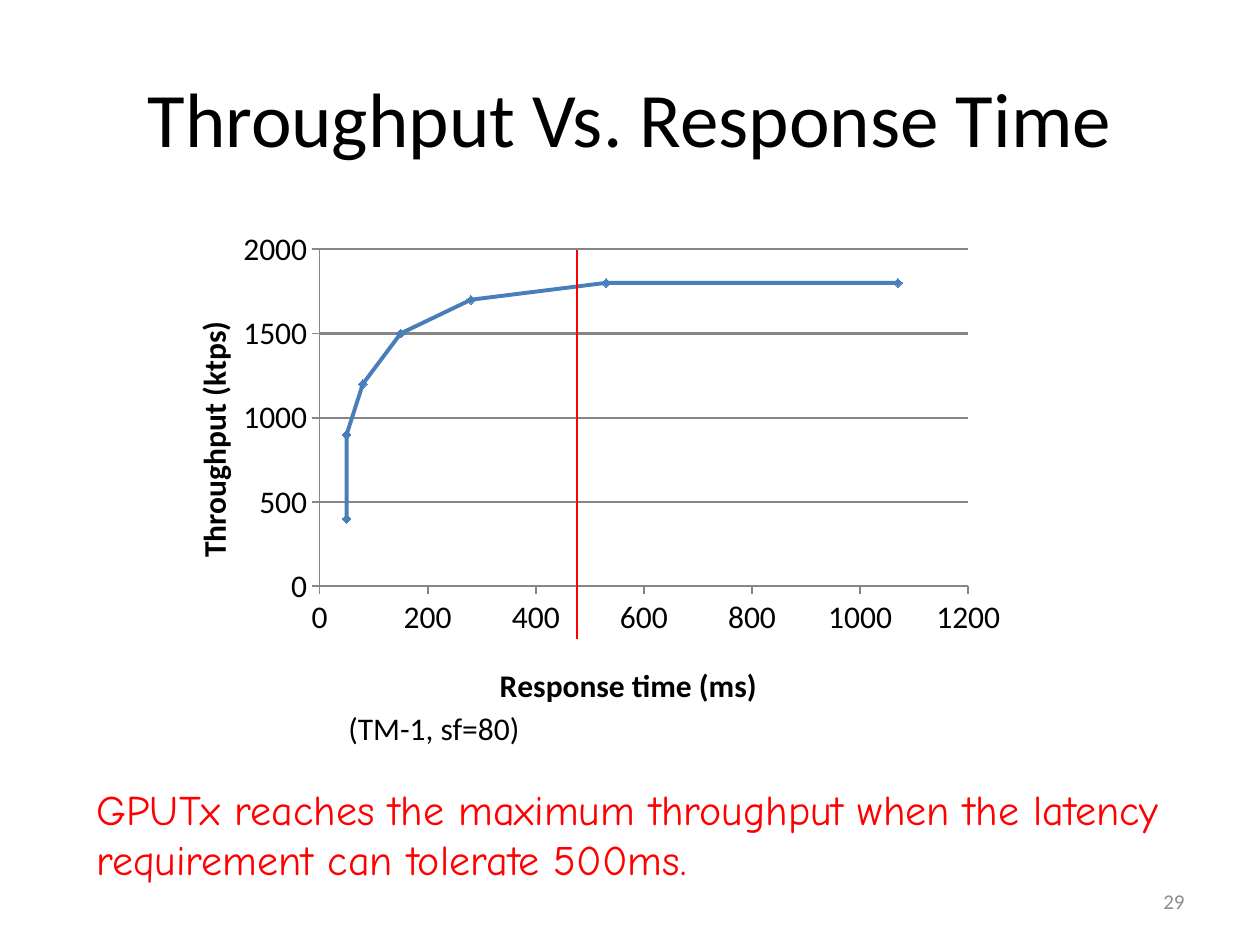
from lxml import etree
from pptx import Presentation
from pptx.chart.data import XyChartData
from pptx.dml.color import RGBColor
from pptx.enum.chart import XL_CHART_TYPE, XL_MARKER_STYLE, XL_TICK_MARK
from pptx.enum.shapes import MSO_CONNECTOR
from pptx.enum.text import MSO_ANCHOR, PP_ALIGN
from pptx.oxml.ns import qn
from pptx.util import Pt

SMOOTH_SCATTER = XL_CHART_TYPE.XY_SCATTER_SMOOTH
DIAMOND = XL_MARKER_STYLE.DIAMOND
TICK_OUTSIDE, TICK_NONE = XL_TICK_MARK.OUTSIDE, XL_TICK_MARK.NONE
STRAIGHT = MSO_CONNECTOR.STRAIGHT
TOP, MIDDLE = MSO_ANCHOR.TOP, MSO_ANCHOR.MIDDLE
LEFT, CENTER, RIGHT = PP_ALIGN.LEFT, PP_ALIGN.CENTER, PP_ALIGN.RIGHT

BLACK = RGBColor(0x00, 0x00, 0x00)
GRAY = RGBColor(0x8C, 0x8C, 0x8C)
AXIS_GRAY = RGBColor(0x86, 0x86, 0x86)
RED = RGBColor(0xFF, 0x00, 0x00)
BLUE = RGBColor(0x4F, 0x81, 0xBD)
CURVE_BLUE = RGBColor(0x4A, 0x7E, 0xBB)

EMU_PER_PX = 914400 // 126
SLIDE_SIZE = (1260, 945)
CHART_BOX = (147, 220, 872, 504)
PLOT_BOX = (320, 249, 649, 337)
LATENCY_LINE = (577, 250, 577, 639)

TEXTS = [
    {"text": "Throughput Vs. Response Time", "box": (63, 38, 1134, 157),
     "anchor": MIDDLE, "align": CENTER, "wrap": True,
     "font": {"size": Pt(44), "name": "Calibri"}, "color": BLACK},
    {"text": "29", "box": (903, 876, 294, 50),
     "anchor": MIDDLE, "align": RIGHT, "wrap": True,
     "font": {"size": Pt(12), "name": "Calibri"}, "color": GRAY},
    {"text": "(TM-1, sf=80)", "box": (336, 703, 199, 50),
     "anchor": TOP, "align": LEFT, "wrap": False,
     "font": {"size": Pt(18), "name": "Calibri"}, "color": BLACK},
    {"text": "GPUTx reaches the maximum throughput when the latency "
             "requirement can tolerate 500ms.", "box": (84, 777, 1103, 115),
     "anchor": TOP, "align": LEFT, "wrap": True,
     "font": {"size": Pt(24), "name": "Comic Neue"}, "color": RED},
]

POINTS = [(50, 400), (50, 900), (80, 1200), (150, 1500),
          (280, 1700), (530, 1800), (1070, 1800)]
AXES = {
    "category_axis": {"title": "Response time (ms)", "corner": (494, 658),
                      "maximum": 1200, "step": 200, "grid": False},
    "value_axis": {"title": "Throughput (ktps)", "corner": (186, 316),
                   "maximum": 2000, "step": 500, "grid": True},
}


def emu(lengths):
    return [length * EMU_PER_PX for length in lengths]


def set_format(target, values):
    for name, value in values.items():
        setattr(target, name, value)


def set_line(line, color, width):
    line.color.rgb = color
    line.width = Pt(width)


def add_text(slide, item):
    box = slide.shapes.add_textbox(*emu(item["box"]))
    frame = box.text_frame
    set_format(frame, {"word_wrap": item["wrap"], "vertical_anchor": item["anchor"]})
    para = frame.paragraphs[0]
    para.alignment = item["align"]
    span = para.add_run()
    span.text = item["text"]
    set_format(span.font, item["font"])
    span.font.color.rgb = item["color"]


def place_in_chart(element, index, corner, size=(), inner=False):
    for old in element.findall(qn("c:layout")):
        element.remove(old)
    layout = etree.Element(qn("c:layout"))
    manual = etree.SubElement(layout, qn("c:manualLayout"))
    left, top, width, height = CHART_BOX
    fractions = [(corner[0] - left) / width, (corner[1] - top) / height]
    fractions += [part / whole for part, whole in zip(size, (width, height))]
    settings = [("layoutTarget", "inner")] if inner else []
    settings += [("xMode", "edge"), ("yMode", "edge")]
    settings += [(name, f"{value:.3f}") for name, value in zip("xywh", fractions)]
    for name, value in settings:
        etree.SubElement(manual, qn(f"c:{name}")).set("val", value)
    element.insert(index, layout)


def format_axis(axis, item):
    set_format(axis, {
        "minimum_scale": 0, "maximum_scale": item["maximum"],
        "major_unit": item["step"], "has_major_gridlines": item["grid"],
        "major_tick_mark": TICK_OUTSIDE, "minor_tick_mark": TICK_NONE,
    })
    set_line(axis.format.line, AXIS_GRAY, 1)
    if item["grid"]:
        set_line(axis.major_gridlines.format.line, AXIS_GRAY, 1.25)
    title = axis.axis_title
    title.text_frame.text = item["title"]
    font = title.text_frame.paragraphs[0].runs[0].font
    set_format(font, {"size": Pt(18), "name": "Calibri", "bold": True})
    font.color.rgb = BLACK
    place_in_chart(title._element, 1, item["corner"])


def add_throughput_chart(slide):
    data = XyChartData()
    points = data.add_series("Series 1")
    for response_time, throughput in POINTS:
        points.add_data_point(response_time, throughput)
    chart = slide.shapes.add_chart(SMOOTH_SCATTER, *emu(CHART_BOX), data).chart
    set_format(chart, {"has_legend": False, "has_title": False})
    set_format(chart.font, {"size": Pt(18), "name": "Calibri"})
    chart.font.color.rgb = BLACK
    for name, item in AXES.items():
        format_axis(getattr(chart, name), item)
    plot = chart.plots[0]
    plot.vary_by_categories = False
    curve = plot.series[0]
    curve.smooth = True
    set_line(curve.format.line, CURVE_BLUE, 2.25)
    set_format(curve.marker, {"style": DIAMOND, "size": 5})
    curve.marker.format.fill.solid()
    curve.marker.format.fill.fore_color.rgb = BLUE
    set_line(curve.marker.format.line, CURVE_BLUE, 0.75)
    plot_area = chart._chartSpace.find(qn("c:chart")).find(qn("c:plotArea"))
    place_in_chart(plot_area, 0, PLOT_BOX[:2], PLOT_BOX[2:], inner=True)


def add_latency_line(slide):
    line = slide.shapes.add_connector(STRAIGHT, *emu(LATENCY_LINE))
    set_line(line.line, RED, 1.5)
    etree.SubElement(line._element.spPr, qn("a:effectLst"))


def main():
    deck = Presentation()
    deck.slide_width, deck.slide_height = emu(SLIDE_SIZE)
    page = deck.slides.add_slide(deck.slide_layouts[6])
    add_throughput_chart(page)
    for item in TEXTS:
        add_text(page, item)
    add_latency_line(page)
    deck.save("out.pptx")


if __name__ == "__main__":
    main()
